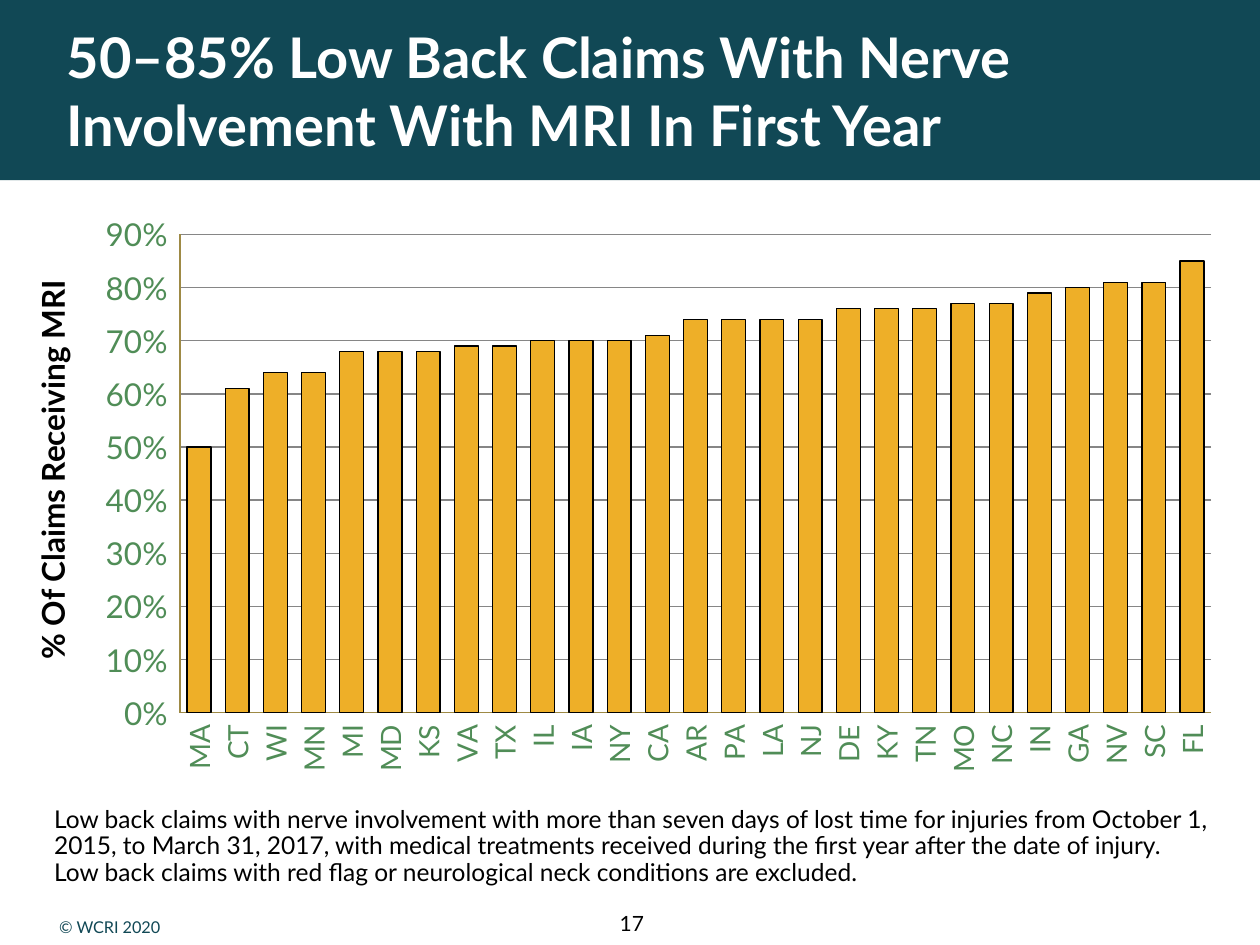
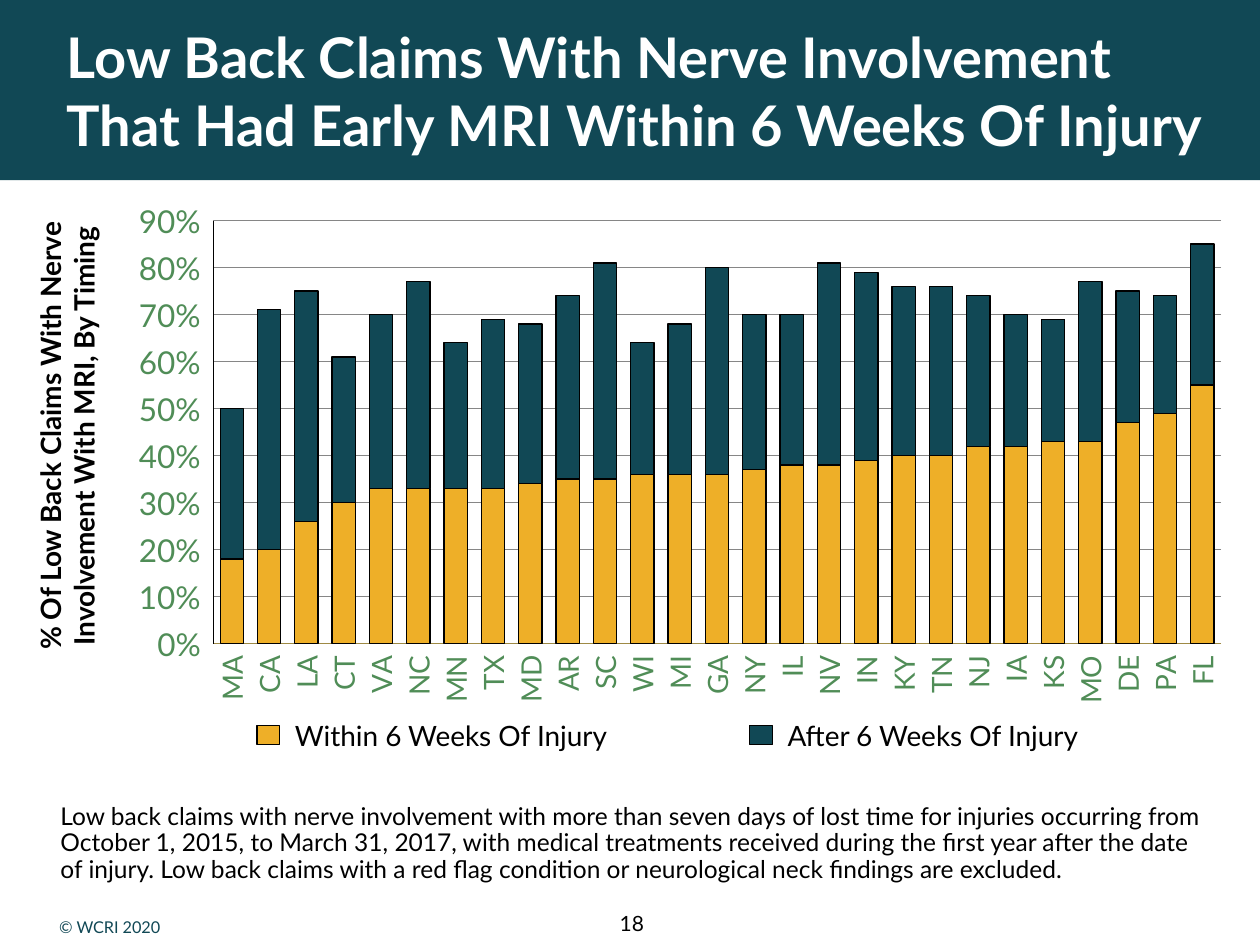
from pptx import Presentation
from pptx.chart.data import CategoryChartData as Data
from pptx.dml.color import RGBColor as RGB
from pptx.enum.chart import XL_CHART_TYPE as Kind
from pptx.enum.chart import XL_TICK_LABEL_POSITION as Place
from pptx.enum.chart import XL_TICK_MARK as Tick
from pptx.enum.shapes import MSO_SHAPE as Form
from pptx.enum.text import MSO_ANCHOR as Anchor
from pptx.enum.text import PP_ALIGN as Align
from pptx.oxml.ns import qn
from pptx.util import Inches, Pt
from lxml import etree

TEAL = RGB(0x11, 0x48, 0x55)
GOLD = RGB(0xEE, 0xAF, 0x28)
GREEN = RGB(0x50, 0x8D, 0x57)
OLIVE = RGB(0x9E, 0x8A, 0x45)
GRAY = RGB(0x86, 0x86, 0x86)
BLACK = RGB(0, 0, 0)
WHITE = RGB(0xFF, 0xFF, 0xFF)
FONT = "Lato"


class Deck:
    """Holds the shared style and the current slide."""

    def __init__(self):
        self.prs = Presentation()
        self.prs.slide_width, self.prs.slide_height = Inches(10), Inches(7.5)
        self.slide = None

    def start(self, title, width, number):
        """Add a slide with band, title, copyright line and number."""
        self.slide = self.prs.slides.add_slide(self.prs.slide_layouts[6])
        self.rect((0, 0, 10, 1.43), TEAL)
        self.text(title, (0.53, 0, width, 1.43), 32, WHITE, bold=True,
                  anchor=Anchor.MIDDLE)
        foot = self.text("© WCRI 2020", (0.47, 7.24, 3.8, 0.3), 16, TEAL,
                         anchor=Anchor.MIDDLE)
        foot.runs[0].font._element.set("baseline", "30000")
        self.text(str(number), (4.8, 7.23, 0.43, 0.23), 12, align=Align.CENTER)

    def rect(self, box, fill, edge=None):
        shape = self.slide.shapes.add_shape(Form.RECTANGLE, *map(Inches, box))
        shape.shadow.inherit = False
        shape.fill.solid()
        shape.fill.fore_color.rgb = fill
        if edge is None:
            shape.line.fill.background()
        else:
            self.line(shape.line, edge)

    def line(self, line, color):
        line.color.rgb = color
        line.width = Pt(0.75)

    def style(self, font, size, color, bold=False):
        font.name, font.size, font.bold = FONT, Pt(size), bold
        font.color.rgb = color

    def text(self, words, box, size, color=BLACK, bold=False,
             align=Align.LEFT, anchor=Anchor.TOP, turn=0):
        shape = self.slide.shapes.add_textbox(*map(Inches, box))
        shape.rotation = turn
        frame = shape.text_frame
        frame.word_wrap = True
        frame.vertical_anchor = anchor
        frame.margin_left = frame.margin_right = 0
        frame.margin_top = frame.margin_bottom = 0
        frame.text = words
        para = frame.paragraphs[0]
        para.alignment = align
        self.style(para.runs[0].font, size, color, bold)
        return para

    def note(self, words, box):
        para = self.text(words, box, 14, anchor=Anchor.MIDDLE)
        para.line_spacing = Pt(15)
        para.space_after = Pt(4)

    def side(self, words, box, size):
        """Write the value axis title, turned to read upwards."""
        self.text(words, box, size, bold=True, align=Align.CENTER,
                  anchor=Anchor.MIDDLE, turn=270)

    def legend(self, left, words, color):
        self.rect((left, 5.76, 0.18, 0.15), color, BLACK)
        self.text(words, (left + 0.3, 5.7, 2.65, 0.27), 16)

    def chart(self, kind, box, plot, states, rows, edge):
        """Draw columns from whole percentages, one row per series."""
        data = Data(number_format="0%")
        data.categories = states.split()
        for i, row in enumerate(rows, 1):
            data.add_series(f"Series {i}", [n / 100 for n in row])
        chart = self.slide.shapes.add_chart(
            kind, *map(Inches, box), data).chart
        chart.has_legend = chart.has_title = False
        self.style(chart.font, 18, BLACK)

        # Columns
        bars = chart.plots[0]
        bars.gap_width = 60
        bars.vary_by_categories = False
        if len(rows) > 1:
            bars.overlap = 100
        for series, color in zip(bars.series, (GOLD, TEAL)):
            series.format.fill.solid()
            series.format.fill.fore_color.rgb = color
            self.line(series.format.line, BLACK)

        # Axes
        cat, val = chart.category_axis, chart.value_axis
        for axis, size, color in ((cat, 16, OLIVE), (val, 18, edge)):
            axis.major_tick_mark = axis.minor_tick_mark = Tick.NONE
            axis.tick_label_position = Place.LOW
            self.style(axis.tick_labels.font, size, GREEN)
            self.line(axis.format.line, color)
        turn = cat._element.find(qn("c:txPr")).find(qn("a:bodyPr"))
        turn.set("rot", "-5400000")
        turn.set("vert", "horz")
        val.minimum_scale, val.maximum_scale, val.major_unit = 0, 0.9, 0.1
        val.tick_labels.number_format = "0%"
        val.tick_labels.number_format_is_linked = False
        val.has_major_gridlines = True
        self.line(val.major_gridlines.format.line, GRAY)
        self.layout(chart, plot)

    def layout(self, chart, plot):
        """Fix the inner plot area as shares of the chart."""
        area = chart._chartSpace.find(".//" + qn("c:plotArea"))
        for old in area.findall(qn("c:layout")):
            area.remove(old)
        layout = etree.Element(qn("c:layout"))
        area.insert(0, layout)
        manual = etree.SubElement(layout, qn("c:manualLayout"))
        parts = [("layoutTarget", "inner"), ("xMode", "edge"),
                 ("yMode", "edge"), *zip("xywh", plot)]
        for tag, value in parts:
            etree.SubElement(manual, qn("c:" + tag)).set("val", str(value))


def main():
    deck = Deck()

    # Share of claims with an MRI in the first year
    deck.start("50–85% Low Back Claims With Nerve Involvement With MRI "
               "In First Year", 9.29, 17)
    deck.chart(
        Kind.COLUMN_CLUSTERED, (0.08, 1.63, 9.63, 4.63),
        (0.14, 0.05, 0.85, 0.82),
        "MA CT WI MN MI MD KS VA TX IL IA NY CA AR PA LA NJ DE KY TN MO NC "
        "IN GA NV SC FL",
        [[50, 61, 64, 64, 68, 68, 68, 69, 69, 70, 70, 70, 71, 74, 74, 74, 74,
          76, 76, 76, 77, 77, 79, 80, 81, 81, 85]], OLIVE)
    deck.side("% Of Claims Receiving MRI", (-1.8, 3.53, 4.43, 0.4), 18)
    deck.note("Low back claims with nerve involvement with more than seven "
              "days of lost time for injuries from October 1, 2015, to March "
              "31, 2017, with medical treatments received during the first "
              "year after the date of injury. Low back claims with red flag "
              "or neurological neck conditions are excluded.",
              (0.43, 6.36, 9.18, 0.72))

    # Timing of the MRI
    deck.start("Low Back Claims With Nerve Involvement That Had Early MRI "
               "Within 6 Weeks Of Injury", 9.09, 18)
    deck.chart(
        Kind.COLUMN_STACKED, (0.31, 1.6, 9.4, 4.01),
        (0.147, 0.037, 0.851, 0.838),
        "MA CA LA CT VA NC MN TX MD AR SC WI MI GA NY IL NV IN KY TN NJ IA "
        "KS MO DE PA FL",
        [[18, 20, 26, 30, 33, 33, 33, 33, 34, 35, 35, 36, 36, 36, 37, 38, 38,
          39, 40, 40, 42, 42, 43, 43, 47, 49, 55],
         [32, 51, 49, 31, 37, 44, 31, 36, 34, 39, 46, 28, 32, 44, 33, 32, 43,
          40, 36, 36, 32, 28, 26, 34, 28, 25, 30]], BLACK)
    deck.side("% Of Low Back Claims With Nerve Involvement With MRI, "
              "By Timing", (-1.19, 3.14, 3.44, 0.64), 16)
    deck.legend(2.04, "Within 6 Weeks Of Injury", GOLD)
    deck.legend(5.95, "After 6 Weeks Of Injury", TEAL)
    deck.note("Low back claims with nerve involvement with more than seven "
              "days of lost time for injuries occurring from October 1, 2015, "
              "to March 31, 2017, with medical treatments received during the "
              "first year after the date of injury. Low back claims with a "
              "red flag condition or neurological neck findings are excluded.",
              (0.48, 6.29, 9.09, 0.81))

    deck.prs.save("out.pptx")


if __name__ == "__main__":
    main()
